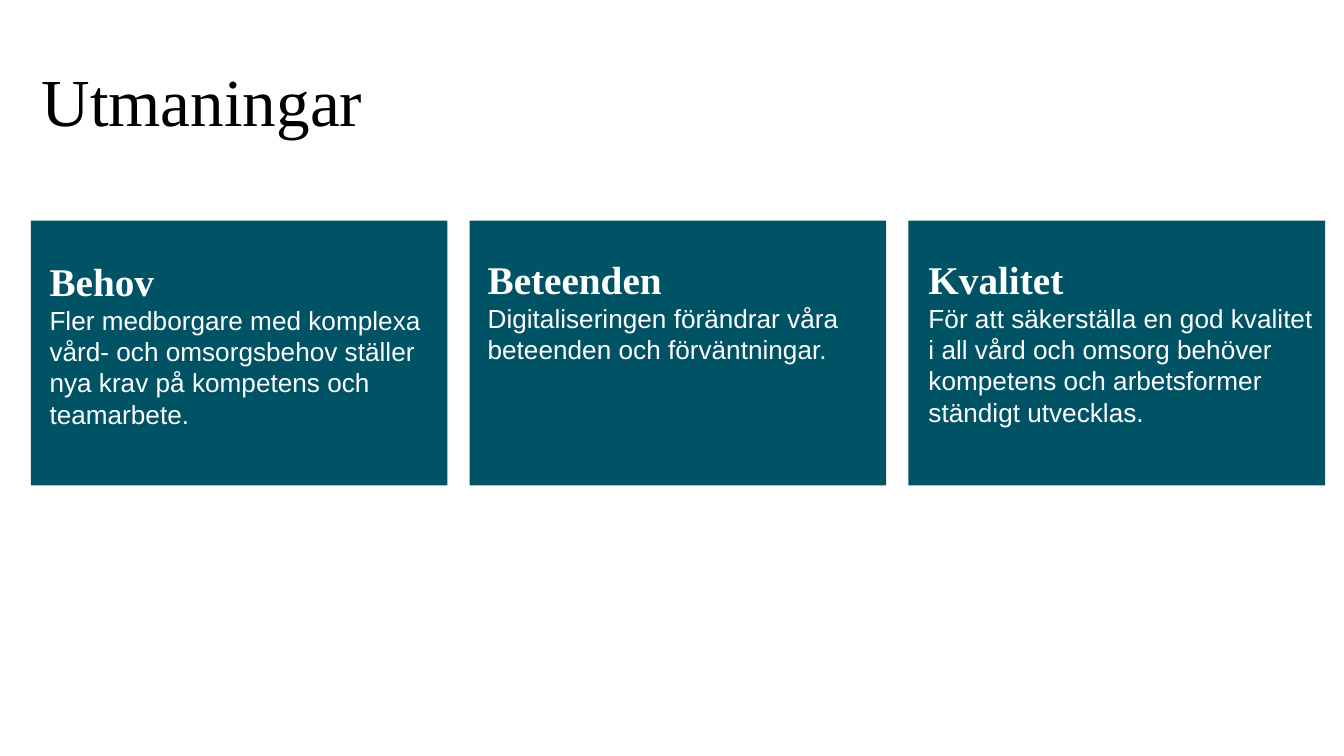
import pptx
import pptx.dml.color
import pptx.enum.shapes
import pptx.enum.text
import pptx.util

TEAL = pptx.dml.color.RGBColor(0x00, 0x53, 0x65)
WHITE = pptx.dml.color.RGBColor(0xFF, 0xFF, 0xFF)
BLACK = pptx.dml.color.RGBColor(0x00, 0x00, 0x00)

SLIDE_W = pptx.util.Inches(10)
SLIDE_H = SLIDE_W * 9 // 16

# Boxes are left, top, width, height in percent of the slide's size.
TITLE_BOX = (3.1, 4.62, 82.7, 14.76)
CARD_LEFT, CARD_TOP, CARD_W, CARD_H = 2.3, 29.2, 31, 35
CARD_PITCH = 32.65

TITLE = {"name": "Times New Roman", "size": pptx.util.Pt(36)}
HEADING = {"name": "Times New Roman", "size": pptx.util.Pt(21), "bold": True}
BODY = {"name": "Arial", "size": pptx.util.Pt(14), "bold": False}

# Heading, body, then the text's box relative to its card
CARDS = [
    ("Behov",
     "Fler medborgare med komplexa vård- och omsorgsbehov ställer "
     "nya krav på kompetens och teamarbete.",
     (0.4, 3, 30.1, 35)),
    ("Beteenden",
     "Digitaliseringen förändrar våra beteenden och förväntningar.",
     (0.35, 2.75, 31.1, 22.4)),
    ("Kvalitet",
     "För att säkerställa en god kvalitet i all vård och omsorg behöver "
     "kompetens och arbetsformer ständigt utvecklas.",
     (0.5, 2.75, 31.1, 30.76)),
]


def to_emu(box):
    """Turn a percent box into slide lengths."""
    return [round(v * full / 100)
            for v, full in zip(box, (SLIDE_W, SLIDE_H) * 2)]


def add_text(s, box, paragraphs, color, frame):
    tf = s.shapes.add_textbox(*to_emu(box)).text_frame
    tf.word_wrap = True
    for key, value in frame.items():
        setattr(tf, key, value)
    for i, (text, font) in enumerate(paragraphs):
        p = tf.paragraphs[0] if i == 0 else tf.add_paragraph()
        r = p.add_run()
        r.text = text
        for key, value in font.items():
            setattr(r.font, key, value)
        r.font.color.rgb = color
    return tf


def add_title(s, box, text):
    frame = {
        "margin_left": 0, "margin_right": 0, "margin_top": 0,
        "margin_bottom": pptx.util.Inches(0.04),
        "vertical_anchor": pptx.enum.text.MSO_ANCHOR.BOTTOM,
    }
    tf = add_text(s, box, [(text, TITLE)], BLACK, frame)
    tf.paragraphs[0].line_spacing = 0.9


def add_card(s, box, heading, body, text_box):
    sp = s.shapes.add_shape(pptx.enum.shapes.MSO_SHAPE.RECTANGLE, *to_emu(box))
    sp.shadow.inherit = False
    sp.fill.solid()
    sp.fill.fore_color.rgb = TEAL
    sp.line.fill.background()

    left, top = box[:2]
    dx, dy, width, height = text_box
    inset = pptx.util.Inches(0.1)
    frame = {f"margin_{side}": inset
             for side in ("left", "top", "right", "bottom")}
    frame["auto_size"] = pptx.enum.text.MSO_AUTO_SIZE.SHAPE_TO_FIT_TEXT
    add_text(s, (left + dx, top + dy, width, height),
             [(heading, HEADING), (body, BODY)], WHITE, frame)


def main():
    prs = pptx.Presentation()
    prs.slide_width, prs.slide_height = SLIDE_W, SLIDE_H
    s = prs.slides.add_slide(prs.slide_layouts[6])
    add_title(s, TITLE_BOX, "Utmaningar")
    for i, card in enumerate(CARDS):
        left = CARD_LEFT + i * CARD_PITCH
        add_card(s, (left, CARD_TOP, CARD_W, CARD_H), *card)
    prs.save("out.pptx")


if __name__ == "__main__":
    main()
